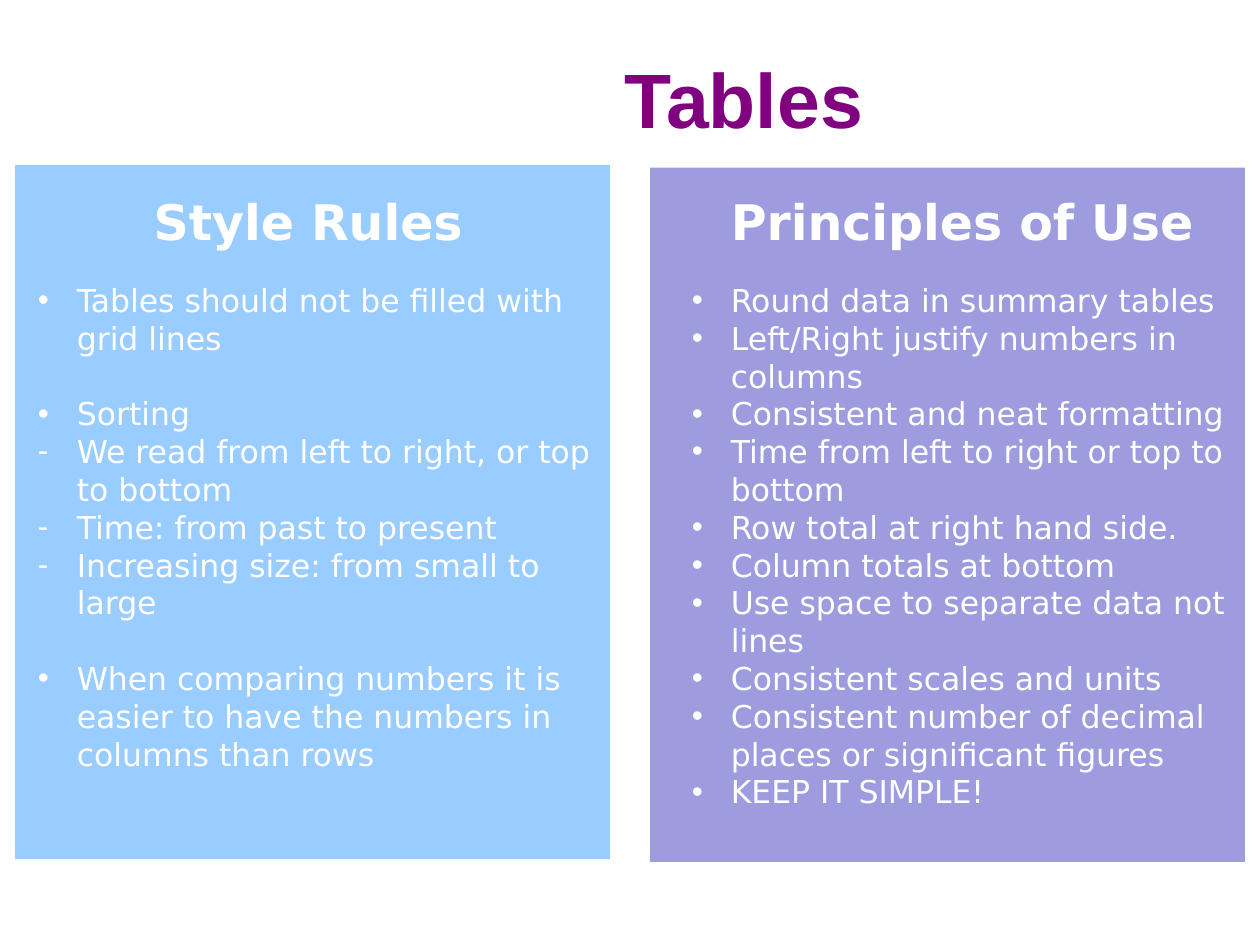
from lxml import etree
from pptx import Presentation
from pptx.dml.color import RGBColor
from pptx.enum import shapes, text
from pptx.oxml.ns import qn
from pptx.util import Inches, Pt

THEME = {
    "title": {"font": "Arial", "size": 44, "color": "800080", "bold": True},
    "heading": {"font": "DejaVu Sans", "size": 28, "color": "FFFFFF", "bold": True},
    "body": {"font": "DejaVu Sans", "size": 18, "color": "FFFFFF", "bold": False},
    "line_spacing": 1.2,
    "indent": 0.31,
}

TITLE = "Tables"
# Each item: bullet, wording, blank lines above
COLUMNS = [
    {
        "heading": "Style Rules",
        "fill": "99CCFF",
        "panel": (0.12, 1.31),
        "text_left": 0.2,
        "items": [
            ("•", "Tables should not be filled with grid lines", 0),
            ("•", "Sorting", 1),
            ("-", "We read from left to right, or top to bottom", 0),
            ("-", "Time: from past to present", 0),
            ("-", "Increasing size: from small to large", 0),
            ("•", "When comparing numbers it is easier to have the numbers in columns than rows", 1),
        ],
    },
    {
        "heading": "Principles of Use",
        "fill": "9C9CDF",
        "panel": (5.16, 1.33),
        "text_left": 5.39,
        "items": [("•", rule, 0) for rule in (
            "Round data in summary tables",
            "Left/Right justify numbers in columns",
            "Consistent and neat formatting",
            "Time from left to right or top to bottom",
            "Row total at right hand side.",
            "Column totals at bottom",
            "Use space to separate data not lines",
            "Consistent scales and units",
            "Consistent number of decimal places or significant figures",
            "KEEP IT SIMPLE!",
        )],
    },
]


def place(holder, left, top, width, height, anchor=text.MSO_ANCHOR.TOP):
    holder.left, holder.top = Inches(left), Inches(top)
    holder.width, holder.height = Inches(width), Inches(height)
    frame = holder.text_frame
    frame.word_wrap = True
    frame.auto_size = text.MSO_AUTO_SIZE.NONE
    frame.vertical_anchor = anchor
    return frame


def style(paragraph, role, align, gap=0):
    look = THEME[role]
    paragraph.alignment = align
    paragraph.space_before = Pt(gap)
    paragraph.space_after = Pt(0)
    for run in paragraph.runs:
        run.font.name = look["font"]
        run.font.size = Pt(look["size"])
        run.font.bold = look["bold"]
        run.font.color.rgb = RGBColor.from_string(look["color"])


def add_bullet(paragraph, mark):
    props = paragraph._p.get_or_add_pPr()
    props.set("marL", str(Inches(THEME["indent"])))
    props.set("indent", str(-Inches(THEME["indent"])))
    etree.SubElement(props, qn("a:buChar")).set("char", mark)


def fill_column(slide, column, heading, body):
    left, top = column["panel"]
    panel = slide.shapes.add_shape(
        shapes.MSO_SHAPE.RECTANGLE, Inches(left), Inches(top), Inches(4.72), Inches(5.51))
    panel.shadow.inherit = False
    panel.fill.solid()
    panel.fill.fore_color.rgb = RGBColor.from_string(column["fill"])
    panel.line.fill.background()
    slide.shapes._spTree.insert(2, panel._element)

    frame = place(heading, column["text_left"], 1.47, 4.49, 0.57)
    frame.text = column["heading"]
    frame.paragraphs[0].line_spacing = Pt(THEME["heading"]["size"] * THEME["line_spacing"])
    style(frame.paragraphs[0], "heading", text.PP_ALIGN.CENTER)

    frame = place(body, column["text_left"], 2.18, 4.65, 4.34)
    frame.text = "\n".join(wording for _, wording, _ in column["items"])
    pitch = THEME["body"]["size"] * THEME["line_spacing"]
    for paragraph, (mark, _, blank) in zip(frame.paragraphs, column["items"]):
        paragraph.line_spacing = Pt(pitch)
        style(paragraph, "body", text.PP_ALIGN.LEFT, blank * pitch)
        add_bullet(paragraph, mark)


def main():
    deck = Presentation()
    deck.slide_width, deck.slide_height = Inches(10), Inches(7.5)
    slide = deck.slides.add_slide(deck.slide_layouts.get_by_name("Comparison"))

    title = place(slide.shapes.title, 2.4, 0.35, 7.01, 0.84, text.MSO_ANCHOR.BOTTOM)
    title.text = TITLE
    style(title.paragraphs[0], "title", text.PP_ALIGN.CENTER)

    holders = slide.placeholders
    for column, (heading, body) in zip(COLUMNS, ((1, 2), (3, 4))):
        fill_column(slide, column, holders[heading], holders[body])
    deck.save("out.pptx")


if __name__ == "__main__":
    main()
